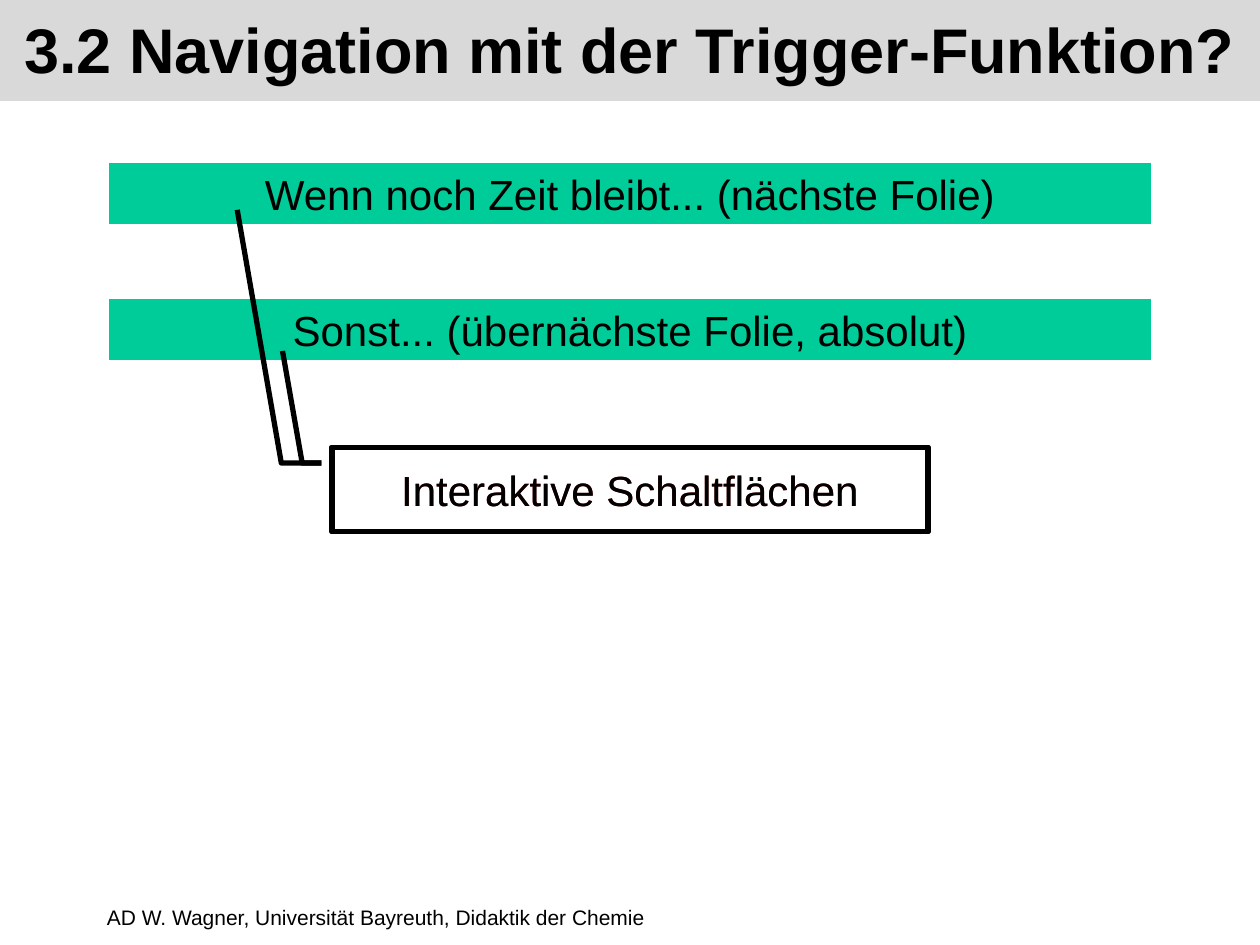
from pptx import Presentation
from pptx.dml.color import RGBColor
from pptx.enum.shapes import MSO_SHAPE
from pptx.enum.text import MSO_ANCHOR, PP_ALIGN
from pptx.util import Inches, Pt

COLORS = {"black": "000000", "maroon": "800000", "band": "D9D9D9", "button": "00CC99"}
W, H = 10, 7.5
TITLE = "3.2 Navigation mit der Trigger-Funktion?"
FOOTER = "AD W. Wagner, Universität Bayreuth, Didaktik der Chemie"
BUTTONS = ["Wenn noch Zeit bleibt... (nächste Folie)",
           "Sonst... (übernächste Folie, absolut)"]
CALLOUT = "Interaktive Schaltflächen"
POINTERS = [
    ("maroon", (0.188, -0.018, 0.188, -0.05, -1.141, -0.083)),
    ("black", (0.188, -0.018, 0.188, -0.085, -2.812, -0.159)),
]
BUTTON_W, BUTTON_H, BUTTON_TOP, BUTTON_PITCH = 8.27, 0.49, 1.29, 1.08
CALLOUT_W, CALLOUT_H, CALLOUT_TOP = 4.73, 0.67, 3.55


def color(name):
    return RGBColor.from_string(COLORS[name])


def centred(width, top, height):
    return [Inches(v) for v in ((W - width) / 2, top, width, height)]


def write(sp, text, size, name="black", align=PP_ALIGN.CENTER, bold=False, wrap=True):
    tf = sp.text_frame
    tf.text = text
    tf.word_wrap = wrap
    tf.vertical_anchor = MSO_ANCHOR.MIDDLE
    p = tf.paragraphs[0]
    p.alignment = align
    font = p.runs[0].font
    for key, value in {"name": "Arial", "size": Pt(size), "bold": bold}.items():
        setattr(font, key, value)
    font.color.rgb = color(name)


def add_shape(s, kind, box, fill=None, line=None):
    sp = s.shapes.add_shape(kind, *box)
    sp.shadow.inherit = False
    if fill:
        sp.fill.solid()
        sp.fill.fore_color.rgb = color(fill)
    else:
        sp.fill.background()
    if line:
        sp.line.color.rgb = color(line)
        sp.line.width = Pt(3)
    else:
        sp.line.fill.background()
    return sp


def main():
    prs = Presentation()
    prs.slide_width, prs.slide_height = Inches(W), Inches(H)
    s = prs.slides.add_slide(prs.slide_layouts[5])

    title = s.shapes.title
    box = dict(zip(("left", "top", "width", "height"), centred(W, -0.03, 0.83)))
    for key, value in box.items():
        setattr(title, key, value)
    title.fill.solid()
    title.fill.fore_color.rgb = color("band")
    write(title, TITLE, 36, bold=True)

    footer = s.shapes.add_textbox(*centred(8.5, 7.03, 0.5))
    write(footer, FOOTER, 12, align=PP_ALIGN.LEFT)

    for row, text in enumerate(BUTTONS):
        box = centred(BUTTON_W, BUTTON_TOP + row * BUTTON_PITCH, BUTTON_H)
        sp = add_shape(s, MSO_SHAPE.ACTION_BUTTON_CUSTOM, box, fill="button")
        write(sp, text, 24, wrap=False)

    for name, points in POINTERS:
        box = centred(CALLOUT_W, CALLOUT_TOP, CALLOUT_H)
        sp = add_shape(s, MSO_SHAPE.LINE_CALLOUT_2, box, line="black")
        for i, value in enumerate(points):
            sp.adjustments[i] = value
        write(sp, CALLOUT, 24, name)

    prs.save("out.pptx")


if __name__ == "__main__":
    main()
